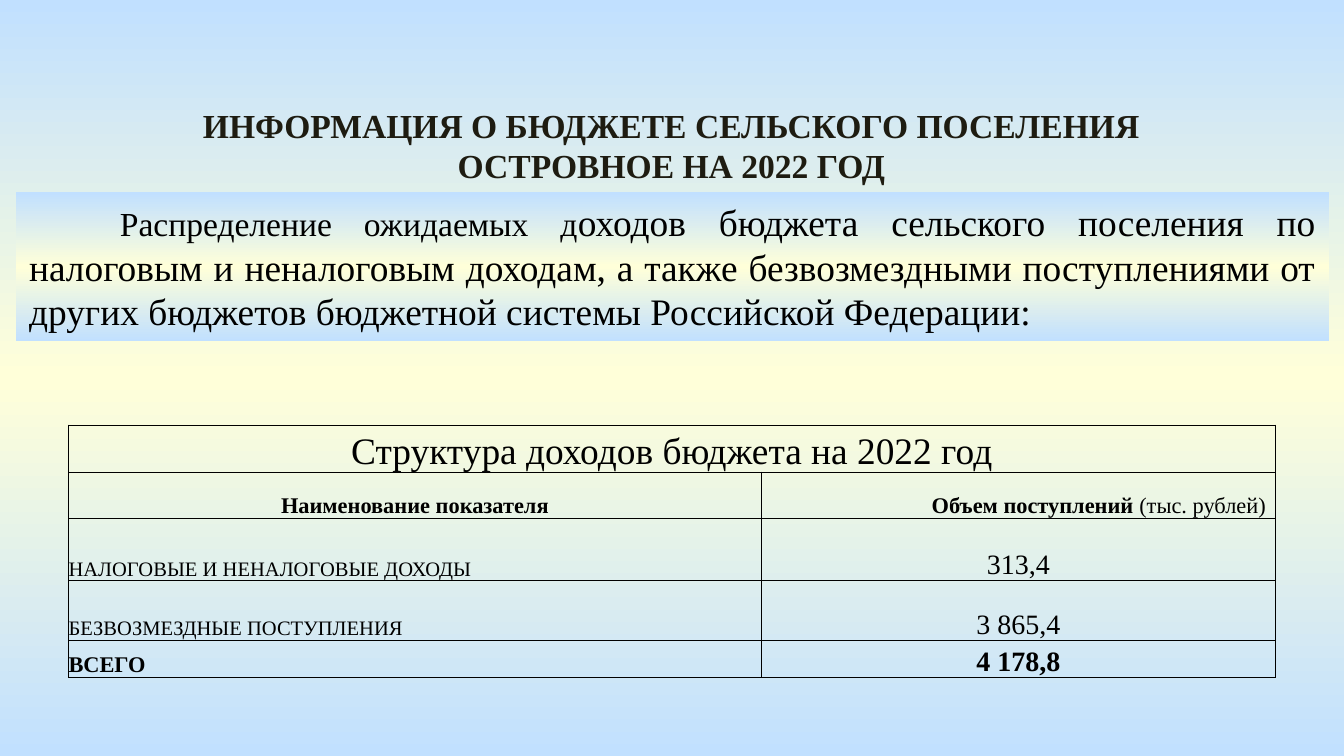
from copy import deepcopy

from lxml import etree
from pptx import Presentation, util as u
from pptx.dml.color import RGBColor
from pptx.enum import shapes, text
from pptx.oxml.ns import qn

BLACK = RGBColor(0x00, 0x00, 0x00)
DARK = RGBColor(0x1E, 0x1C, 0x11)
SKY = RGBColor(0xC1, 0xE0, 0xFF)
CREAM = RGBColor(0xFF, 0xFF, 0xD9)
SERIF, SANS = "Times New Roman", "Calibri"
LEFT, CENTER = text.PP_ALIGN.LEFT, text.PP_ALIGN.CENTER
RIGHT, JUSTIFY = text.PP_ALIGN.RIGHT, text.PP_ALIGN.JUSTIFY


def add_span(para, words, size=18, font=SERIF, color=BLACK, bold=False):
    span = para.add_run()
    span.text = words
    span.font.size = u.Pt(size)
    span.font.name = font
    span.font.color.rgb = color
    span.font.bold = bold


def add_spans(para, align, spans):
    para.alignment = align
    for words, style in spans:
        add_span(para, words, **style)


def paint_gradient(fill, owner):
    """Vertical sky - cream - sky gradient."""
    fill.gradient()
    fill.gradient_angle = 90
    stop_list = next(owner.iter(qn("a:gsLst")))
    stop_list.append(deepcopy(stop_list[0]))
    for stop, color, place in zip(fill.gradient_stops, (SKY, CREAM, SKY), (0, 0.5, 1)):
        stop.color.rgb = color
        stop.position = place


class BudgetSlide:
    def __init__(self, deck):
        self.page = deck.slides.add_slide(deck.slide_layouts[6])
        paint_gradient(self.page.background.fill, self.page.element)

    def set_text(self, box, align, spans):
        frame = box.text_frame
        frame.word_wrap = True
        frame.auto_size = text.MSO_AUTO_SIZE.SHAPE_TO_FIT_TEXT
        frame.vertical_anchor = text.MSO_ANCHOR.TOP
        add_spans(frame.paragraphs[0], align, spans)

    def panel(self, place, align, spans):
        box = self.page.shapes.add_shape(shapes.MSO_SHAPE.RECTANGLE, *map(u.Pt, place))
        box.shadow.inherit = False
        box.line.fill.background()
        paint_gradient(box.fill, box.element)
        self.set_text(box, align, spans)

    def label(self, place, align, spans):
        self.set_text(self.page.shapes.add_textbox(*map(u.Pt, place)), align, spans)

    def table(self, left, top, widths, heights):
        frame = self.page.shapes.add_table(
            len(heights), len(widths), u.Pt(left), u.Pt(top),
            u.Pt(sum(widths)), u.Pt(sum(heights)))
        grid = frame.table
        grid.first_row = grid.horz_banding = False
        for column, width in zip(grid.columns, widths):
            column.width = u.Pt(width)
        for row, height in zip(grid.rows, heights):
            row.height = u.Pt(height)
        for cell in grid.iter_cells():
            self.outline(cell)
            cell.fill.background()
        return grid

    def outline(self, cell):
        props = cell._tc.get_or_add_tcPr()
        for side in ("a:lnL", "a:lnR", "a:lnT", "a:lnB"):
            line = etree.SubElement(props, qn(side), w=str(u.Pt(0.5)))
            solid = etree.SubElement(line, qn("a:solidFill"))
            etree.SubElement(solid, qn("a:srgbClr"), val=str(BLACK))

    def fill_cell(self, cell, align, spans, side_margin=0):
        cell.margin_left = cell.margin_right = u.Pt(side_margin)
        cell.margin_top = cell.margin_bottom = 0
        cell.vertical_anchor = text.MSO_ANCHOR.BOTTOM
        add_spans(cell.text_frame.paragraphs[0], align, spans)


def main():
    deck = Presentation()
    deck.slide_width, deck.slide_height = u.Pt(720), u.Pt(405)
    slide = BudgetSlide(deck)

    # Introduction
    slide.panel((8.5, 103, 703.5, 80), JUSTIFY, [
        (" \t", dict(font=SANS)),
        ("Распределение ожидаемых д", {}),
        ("оходов бюджета сельского поселения по налоговым и неналоговым доходам, "
         "а также безвозмездными поступлениями от других бюджетов бюджетной системы "
         "Российской Федерации:", dict(size=20)),
    ])

    # Title
    slide.label((81.5, 52.5, 556.5, 51), CENTER, [
        ("ИНФОРМАЦИЯ О БЮДЖЕТЕ СЕЛЬСКОГО ПОСЕЛЕНИЯ ОСТРОВНОЕ НА 2022 ГОД",
         dict(color=DARK, bold=True)),
    ])

    # Table heading
    grid = slide.table(36.7, 227.7, (371.3, 275.2), (25.2, 24.6, 33.6, 32, 20))
    grid.cell(0, 0).merge(grid.cell(0, 1))
    slide.fill_cell(grid.cell(0, 0), CENTER,
                    [("Структура доходов бюджета на 2022 год", dict(size=20))])
    slide.fill_cell(grid.cell(1, 0), CENTER,
                    [("Наименование показателя", dict(size=12, bold=True))])
    slide.fill_cell(grid.cell(1, 1), RIGHT, [
        ("Объем поступлений ", dict(size=12, bold=True)),
        ("(тыс. рублей)", dict(size=12)),
    ], side_margin=5)

    # Table figures
    incomes = [
        ("НАЛОГОВЫЕ И НЕНАЛОГОВЫЕ ДОХОДЫ", "313,4", 11, False),
        ("БЕЗВОЗМЕЗДНЫЕ ПОСТУПЛЕНИЯ", "3 865,4", 11, False),
        ("ВСЕГО", "4 178,8", 12, True),
    ]
    for row, (name, amount, size, bold) in enumerate(incomes, start=2):
        slide.fill_cell(grid.cell(row, 0), LEFT, [(name, dict(size=size, bold=bold))])
        slide.fill_cell(grid.cell(row, 1), CENTER, [(amount, dict(size=15, bold=bold))])

    deck.save("out.pptx")


if __name__ == "__main__":
    main()
